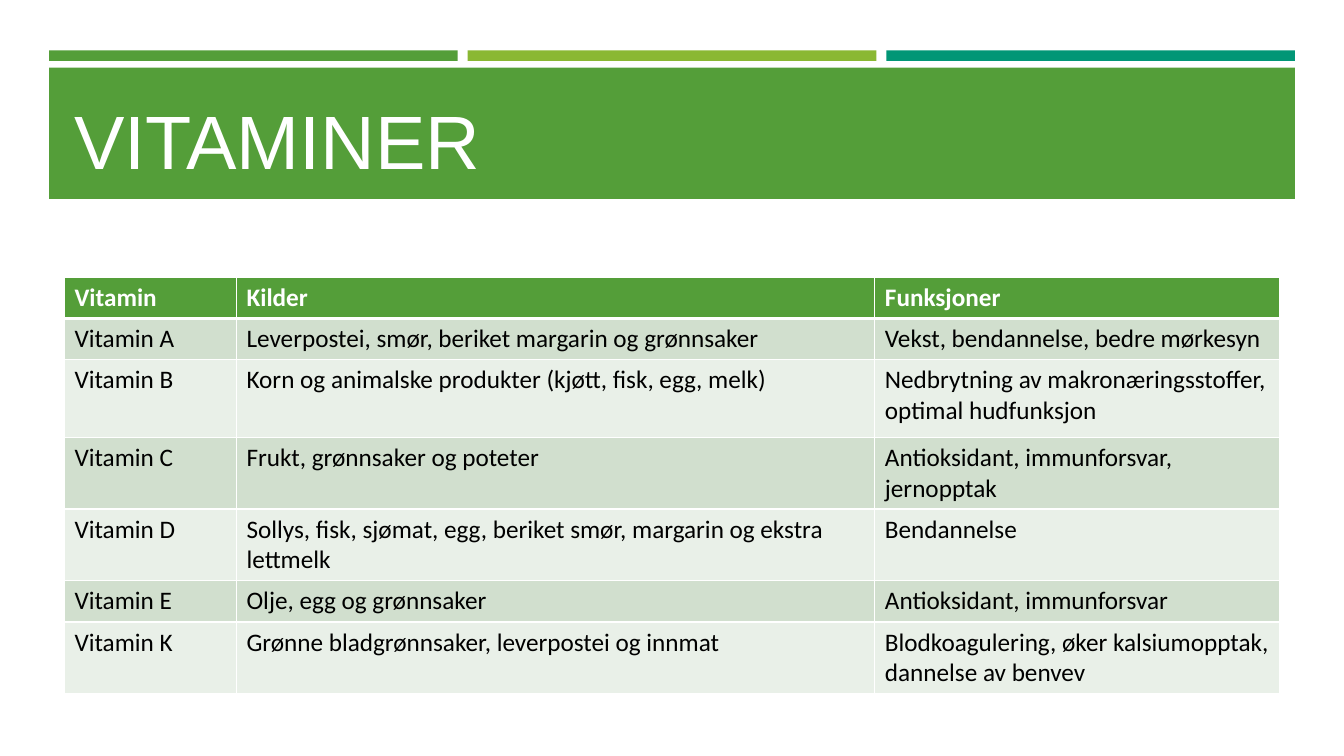
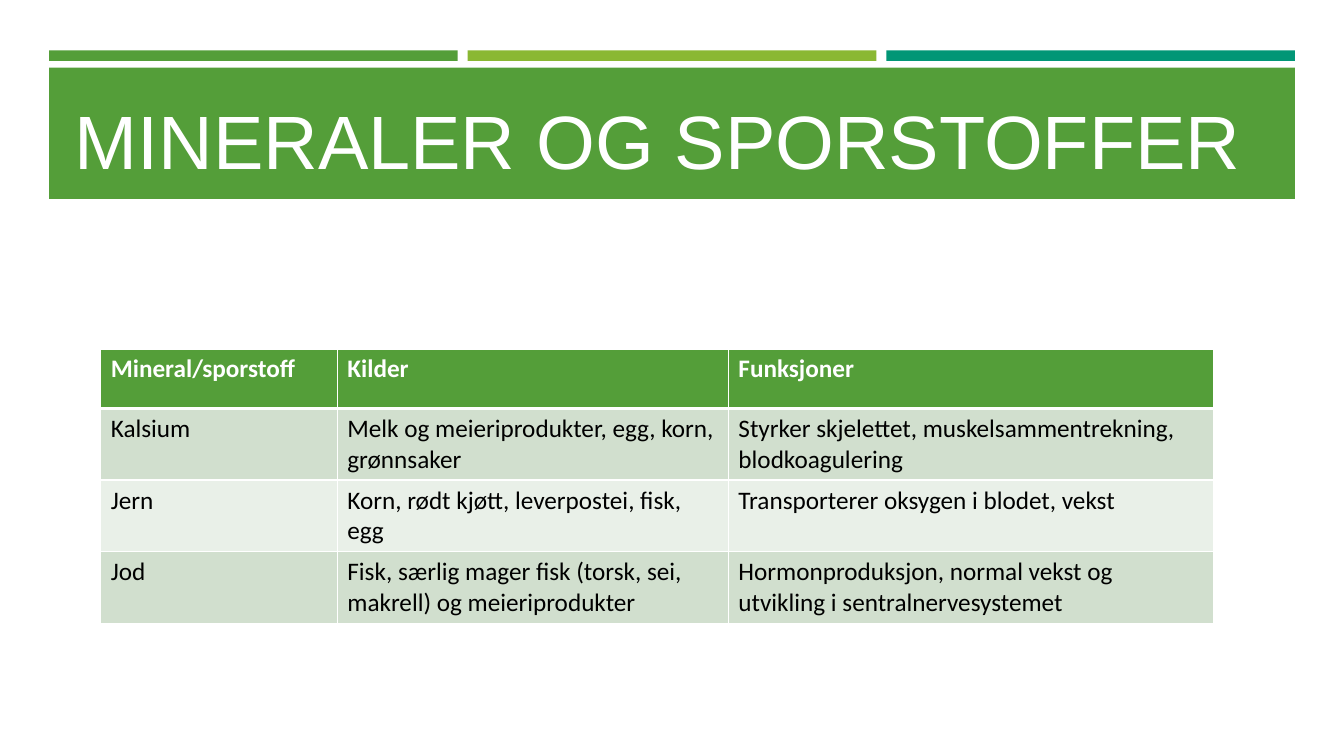
from lxml import etree
from pptx import Presentation
from pptx.dml.color import RGBColor
from pptx.enum.shapes import MSO_SHAPE
from pptx.enum.text import MSO_ANCHOR, MSO_AUTO_SIZE, PP_ALIGN
from pptx.oxml.ns import qn
from pptx.util import Inches, Pt

RECTANGLE = MSO_SHAPE.RECTANGLE
BOTTOM = MSO_ANCHOR.BOTTOM
NO_AUTOFIT = MSO_AUTO_SIZE.NONE
LEFT = PP_ALIGN.LEFT

GREEN = RGBColor(0x54, 0x9E, 0x39)
LIME = RGBColor(0x8A, 0xB8, 0x33)
TEAL = RGBColor(0x02, 0x96, 0x76)
PALE = RGBColor(0xD1, 0xDF, 0xCE)
PALER = RGBColor(0xE9, 0xF0, 0xE8)
WHITE = RGBColor(0xFF, 0xFF, 0xFF)
BLACK = RGBColor(0x00, 0x00, 0x00)

TITLE_ONLY = 5
BAND_LEFT, BAND_WIDTH, STRIPE_GAP = 3.65, 92.7, 0.75

VITAMINS = [
    ("Vitamin", "Kilder", "Funksjoner"),
    ("Vitamin A", "Leverpostei, smør, beriket margarin og grønnsaker",
     "Vekst, bendannelse, bedre mørkesyn"),
    ("Vitamin B", "Korn og animalske produkter (kjøtt, fisk, egg, melk)",
     "Nedbrytning av makronæringsstoffer, optimal hudfunksjon"),
    ("Vitamin C", "Frukt, grønnsaker og poteter",
     "Antioksidant, immunforsvar, jernopptak"),
    ("Vitamin D", "Sollys, fisk, sjømat, egg, beriket smør, margarin og ekstra lettmelk",
     "Bendannelse"),
    ("Vitamin E", "Olje, egg og grønnsaker", "Antioksidant, immunforsvar"),
    ("Vitamin K", "Grønne bladgrønnsaker, leverpostei og innmat",
     "Blodkoagulering, øker kalsiumopptak, dannelse av benvev"),
]
MINERALS = [
    ("Mineral/sporstoff", "Kilder", "Funksjoner"),
    ("Kalsium", "Melk og meieriprodukter, egg, korn, grønnsaker",
     "Styrker skjelettet, muskelsammentrekning, blodkoagulering"),
    ("Jern", "Korn, rødt kjøtt, leverpostei, fisk, egg",
     "Transporterer oksygen i blodet, vekst"),
    ("Jod", "Fisk, særlig mager fisk (torsk, sei, makrell) og meieriprodukter",
     "Hormonproduksjon, normal vekst og utvikling i sentralnervesystemet"),
]


class Deck:
    """Style and current slide; lengths are percentages of the slide's size."""

    def __init__(self):
        self.prs = Presentation()
        self.prs.slide_width, self.prs.slide_height = Inches(13.33), Inches(7.5)
        self.layout = self.prs.slide_layouts[TITLE_ONLY]
        self.slide = None

    def across(self, share):
        return round(self.prs.slide_width * share / 100)

    def down(self, share):
        return round(self.prs.slide_height * share / 100)

    def box(self, left, top, width, height):
        return self.across(left), self.down(top), self.across(width), self.down(height)

    def add_slide(self, title):
        first = self.slide is None
        self.slide = self.prs.slides.add_slide(self.layout)
        if first:
            self.add_bands()
        self.set_title(title)

    def add_bands(self):
        """Draw the header once and hand it to the layout that all slides share."""
        colors = (GREEN, LIME, TEAL)
        width = (BAND_WIDTH - STRIPE_GAP * (len(colors) - 1)) / len(colors)
        bands = [self.add_block(GREEN, BAND_LEFT, 8.95, BAND_WIDTH, 17.35)]
        for i, color in enumerate(colors):
            left = BAND_LEFT + i * (width + STRIPE_GAP)
            bands.append(self.add_block(color, left, 6.67, width, 1.4))
        for band in bands:
            self.layout.shapes.element.insert(2, band.element)

    def add_block(self, color, *place):
        block = self.slide.shapes.add_shape(RECTANGLE, *self.box(*place))
        block.shadow.inherit = False
        block.fill.solid()
        block.fill.fore_color.rgb = color
        block.line.fill.background()
        return block

    def add_run(self, paragraph, text, font, size, color, bold=False):
        paragraph.alignment = LEFT
        run = paragraph.add_run()
        run.text = text
        run.font.name, run.font.size, run.font.bold = font, Pt(size), bold
        run.font.color.rgb = color

    def set_title(self, text):
        title = self.slide.shapes.title
        title.left, title.top, title.width, title.height = self.box(4.8, 10.25, 90.45, 14.8)
        frame = title.text_frame
        frame.word_wrap = True
        frame.auto_size = NO_AUTOFIT
        frame.vertical_anchor = BOTTOM
        self.add_run(frame.paragraphs[0], text, "Arial", 54, WHITE)

    def add_table(self, left, top, widths, heights, content):
        place = self.box(left, top, sum(widths), sum(heights))
        table = self.slide.shapes.add_table(len(heights), len(widths), *place).table
        for column, width in zip(table.columns, widths):
            column.width = self.across(width)
        for row, height in zip(table.rows, heights):
            row.height = self.down(height)
        for r, texts in enumerate(content):
            for cell, text in zip(table.rows[r].cells, texts):
                self.fill_cell(cell, text, r)

    def fill_cell(self, cell, text, row):
        header = row == 0
        self.add_run(cell.text_frame.paragraphs[0], text, "Calibri", 18,
                     WHITE if header else BLACK, header)
        self.add_borders(cell, L=1, R=1, T=3 if row == 1 else 1, B=3 if header else 1)
        cell.fill.solid()
        cell.fill.fore_color.rgb = GREEN if header else (PALER, PALE)[row % 2]

    def add_borders(self, cell, **widths):
        properties = cell._tc.get_or_add_tcPr()
        for side, width in widths.items():
            line = etree.SubElement(properties, qn(f"a:ln{side}"), w=str(Pt(width)))
            fill = etree.SubElement(line, qn("a:solidFill"))
            etree.SubElement(fill, qn("a:srgbClr"), val=str(WHITE))


def main():
    deck = Deck()
    deck.add_slide("VITAMINER")
    deck.add_table(4.8, 36.65, (12.8, 47.5, 30.15),
                   (5.47, 5.47, 10.27, 7.87, 8.27, 5.47, 8.27), VITAMINS)
    deck.add_slide("MINERALER OG SPORSTOFFER")
    deck.add_table(7.5, 46.15, (17.6, 29.1, 36.1), [7.87] * len(MINERALS), MINERALS)
    deck.prs.save("out.pptx")


if __name__ == "__main__":
    main()
